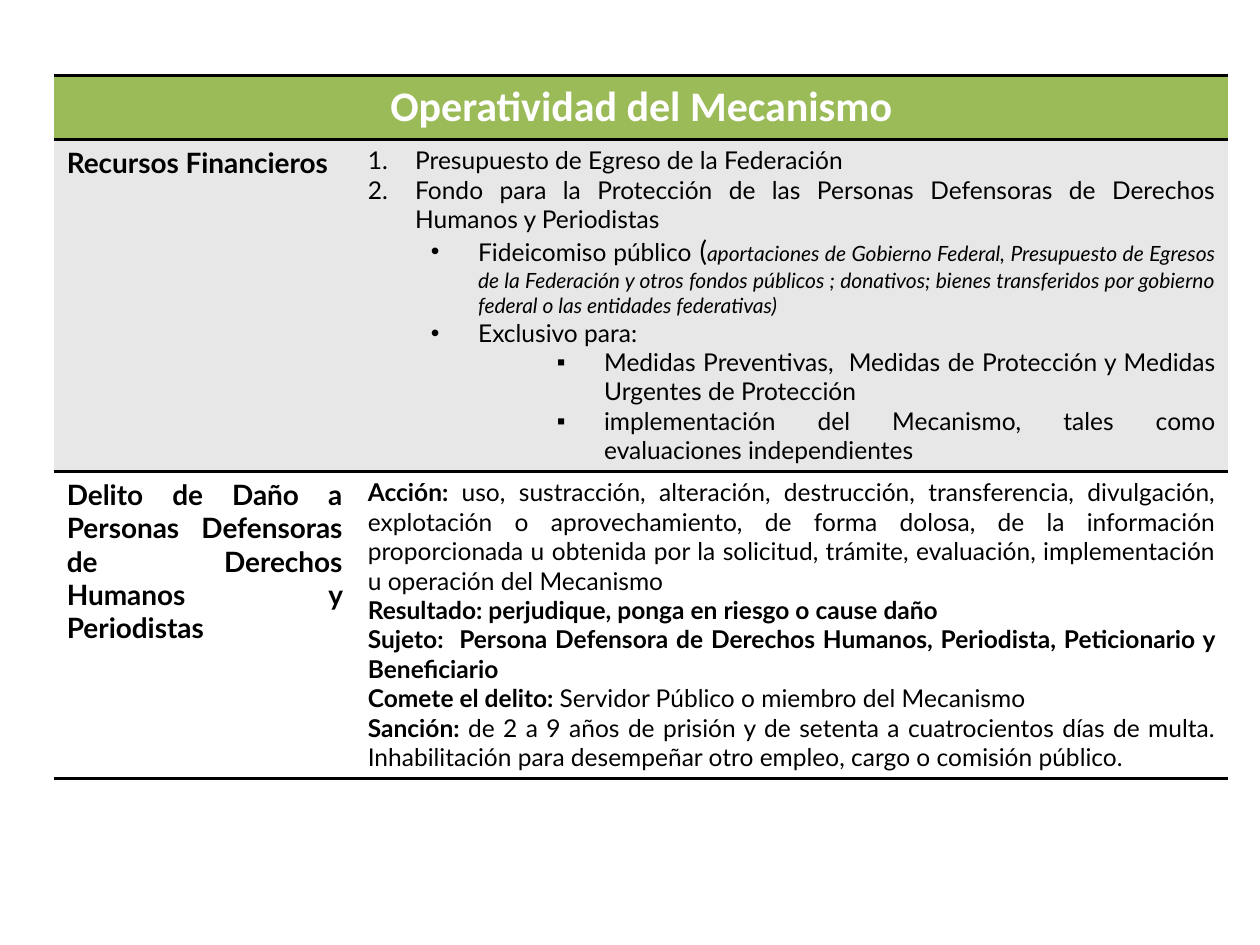
"""Build a slide with a table on how the mechanism operates."""
from lxml import etree
from pptx import Presentation
from pptx.dml.color import RGBColor
from pptx.enum.text import PP_ALIGN
from pptx.oxml.ns import qn
from pptx.util import Pt

LEFT, CENTER, JUSTIFY = PP_ALIGN.LEFT, PP_ALIGN.CENTER, PP_ALIGN.JUSTIFY
NO_STYLE = "{2D5ABB26-0587-4C30-8999-92F81FD0307C}"
BLACK, WHITE, GREEN, GRAY = "000000", "FFFFFF", "9BBB59", "E7E7E7"
HANGING = 27


def color(value):
    return RGBColor.from_string(value)


def add_border(cell, side):
    properties = cell._tc.get_or_add_tcPr()
    line = etree.Element(qn(f"a:{side}"), w=str(Pt(2)))
    fill = etree.SubElement(line, qn("a:solidFill"))
    etree.SubElement(fill, qn("a:srgbClr"), val=BLACK)
    position = len(properties.findall(qn("a:lnT")))
    properties.insert(position, line)


# Each paragraph: alignment, level, bullet, spans of (text, size, bold, italic)
title = [(CENTER, 0, "", [("Operatividad del Mecanismo", 24, True, False)])]
resources_label = [(LEFT, 0, "", [("Recursos Financieros", 16, True, False)])]
crime_label = [(JUSTIFY, 0, "", [(
    "Delito de Daño a Personas Defensoras de Derechos Humanos y Periodistas",
    16, True, False)])]
resources = [
    (JUSTIFY, 0, "1.", [("Presupuesto de Egreso de la Federación ", 14, False, False)]),
    (JUSTIFY, 0, "1.", [(
        "Fondo para la Protección de las Personas Defensoras de Derechos "
        "Humanos y Periodistas ", 14, False, False)]),
    (JUSTIFY, 1, "•", [
        ("Fideicomiso público", 14, False, False),
        (" (", 16, False, False),
        ("aportaciones de Gobierno Federal, Presupuesto de Egresos de la "
         "Federación y otros fondos públicos ; donativos; bienes transferidos "
         "por gobierno federal o las entidades federativas) ", 12, False, True)]),
    (JUSTIFY, 1, "•", [("Exclusivo para:", 14, False, False)]),
    (JUSTIFY, 3, "▪", [(
        "Medidas Preventivas,  Medidas de Protección y Medidas Urgentes de "
        "Protección ", 14, False, False)]),
    (JUSTIFY, 3, "▪", [
        ("implementación del Mecanismo, tales como evaluaciones independientes",
         14, False, False),
        (" ", 12, False, False)]),
]
crime_parts = [
    ("Acción: ", "uso, sustracción, alteración, destrucción, transferencia, "
     "divulgación, explotación o aprovechamiento, de forma dolosa, de la "
     "información proporcionada u obtenida por la solicitud, trámite, "
     "evaluación, implementación u operación del Mecanismo", False),
    ("Resultado: ", "perjudique, ponga en riesgo o cause daño ", True),
    ("Sujeto:  ", "Persona Defensora de Derechos Humanos, Periodista, "
     "Peticionario y Beneficiario ", True),
    ("Comete el delito: ", "Servidor Público o miembro del Mecanismo", False),
    ("Sanción: ", "de 2 a 9 años de prisión y de setenta a cuatrocientos días "
     "de multa. Inhabilitación para desempeñar otro empleo, cargo o comisión "
     "público. ", False),
]
crime = [
    (JUSTIFY, 0, "", [(term, 14, True, False), (text, 14, bold, False)])
    for term, text, bold in crime_parts
]

deck = Presentation()
deck.slide_width, deck.slide_height = Pt(720), Pt(540)
page = deck.slides.add_slide(deck.slide_layouts[6])

widths, heights = [172, 499], [36.5, 189.5, 175]
frame = page.shapes.add_table(
    3, 2, Pt(31), Pt(43.2), Pt(sum(widths)), Pt(sum(heights)))
table = frame.table
table.first_row = table.horz_banding = False
table._tbl.tblPr.find(qn("a:tableStyleId")).text = NO_STYLE
for column, width in zip(table.columns, widths):
    column.width = Pt(width)
for row, height in zip(table.rows, heights):
    row.height = Pt(height)
table.cell(0, 0).merge(table.cell(0, 1))

contents = [[title, []], [resources_label, resources], [crime_label, crime]]
styles = [
    (GREEN, WHITE, "Calibri", ["lnT", "lnB"]),
    (GRAY, BLACK, "Lato", ["lnT"]),
    (WHITE, BLACK, "Lato", ["lnB"]),
]
for row_index, (fill, ink, font, borders) in enumerate(styles):
    for column_index, paragraphs in enumerate(contents[row_index]):
        cell = table.cell(row_index, column_index)
        cell.fill.solid()
        cell.fill.fore_color.rgb = color(fill)
        for side in borders:
            add_border(cell, side)
        for index, (alignment, level, bullet, spans) in enumerate(paragraphs):
            text_frame = cell.text_frame
            para = text_frame.add_paragraph() if index else text_frame.paragraphs[0]
            para.alignment, para.level = alignment, level
            if bullet:
                properties = para._p.get_or_add_pPr()
                properties.set("marL", str(Pt(HANGING + 36 * level)))
                properties.set("indent", str(-Pt(HANGING)))
                if bullet == "1.":
                    etree.SubElement(properties, qn("a:buAutoNum"), type="arabicPeriod")
                else:
                    etree.SubElement(properties, qn("a:buFont"), typeface="Arial")
                    etree.SubElement(properties, qn("a:buChar"), char=bullet)
            for text, size, bold, italic in spans:
                span = para.add_run()
                span.text = text
                span.font.name, span.font.size = font, Pt(size)
                span.font.bold, span.font.italic = bold, italic
                span.font.color.rgb = color(ink)

deck.save("out.pptx")
